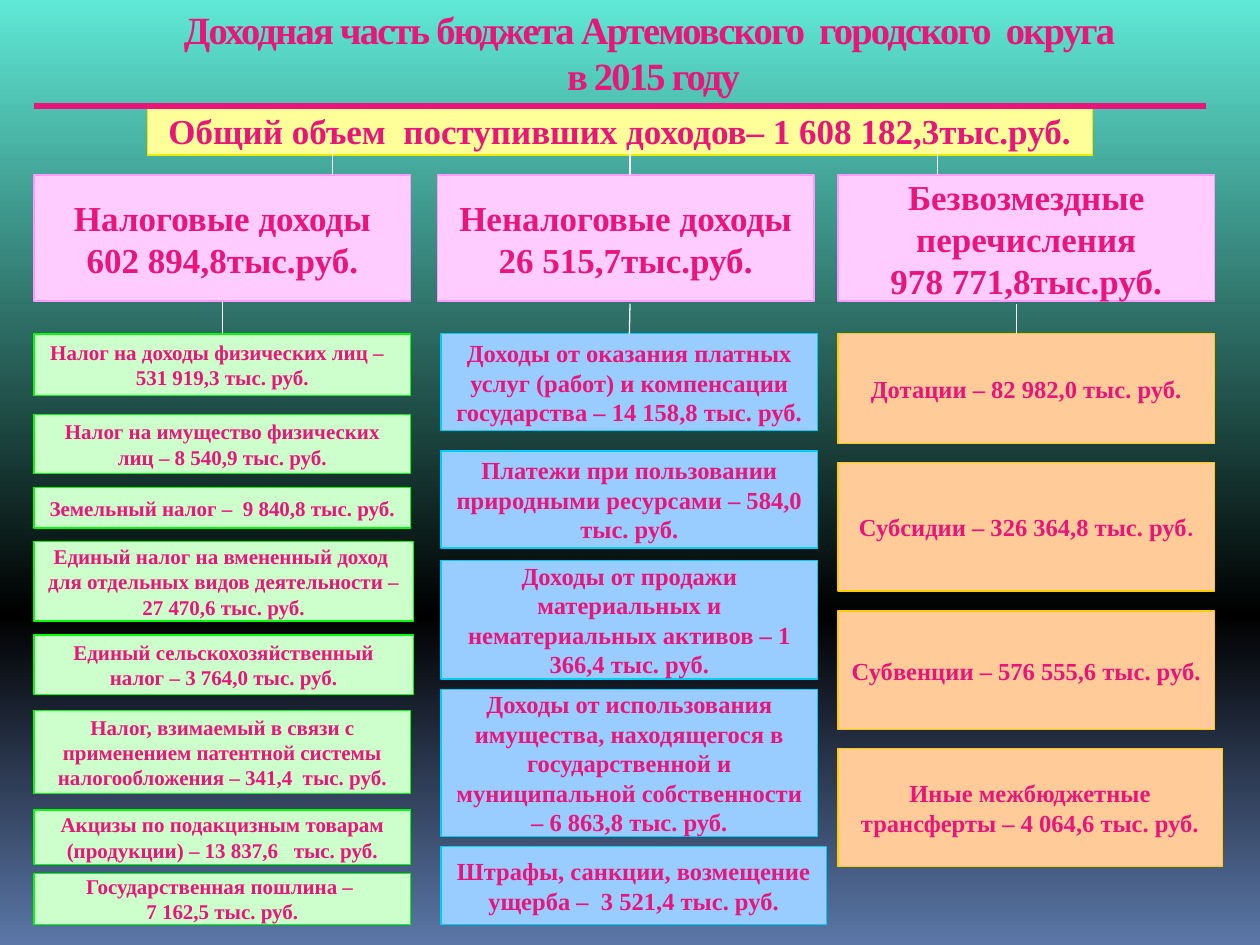
from copy import deepcopy

from pptx import Presentation
from pptx.dml.color import RGBColor
from pptx.enum.shapes import MSO_CONNECTOR as Connector, MSO_SHAPE as Shape
from pptx.enum.text import MSO_ANCHOR as Anchor, PP_ALIGN as Align
from pptx.oxml.ns import qn
from pptx.util import Inches, Pt

PINK = RGBColor(0xEA, 0x15, 0x7A)
WHITE = RGBColor(0xFF, 0xFF, 0xFF)
BACKDROP = [
    (0, RGBColor(0x5F, 0xE8, 0xD6)),
    (0.65, RGBColor(0x00, 0x00, 0x00)),
    (1, RGBColor(0x5B, 0x77, 0xA8)),
]
YELLOW = (RGBColor(0xFF, 0xFF, 0x99), RGBColor(0xF0, 0xEA, 0x00))
ROSE = (RGBColor(0xFF, 0xCC, 0xFF), RGBColor(0xFF, 0x99, 0xFF))
GREEN = (RGBColor(0xCC, 0xFF, 0xCC), RGBColor(0x00, 0xFF, 0x00))
BLUE = (RGBColor(0x99, 0xCC, 0xFF), RGBColor(0x00, 0xCC, 0xFF))
ORANGE = (RGBColor(0xFF, 0xCC, 0x99), RGBColor(0xFF, 0xCC, 0x00))

COLUMN_WIDTH = 2.99
DETAIL_TOP = 2.65

TAXES = [
    (0, 0.49, 2.99, "Налог на доходы физических лиц –  \n531 919,3 тыс. руб."),
    (0.64, 0.47, 2.99, "Налог на имущество физических лиц – 8 540,9 тыс. руб."),
    (1.22, 0.32, 2.99, "Земельный налог –  9 840,8 тыс. руб."),
    (1.65, 0.63, 3.01, "Единый налог на вмененный доход  для отдельных видов "
                       "деятельности – \n27 470,6 тыс. руб."),
    (2.39, 0.47, 3.01, "Единый сельскохозяйственный налог – 3 764,0 тыс. руб."),
    (2.99, 0.66, 2.99, "Налог, взимаемый в связи с применением патентной системы "
                       "налогообложения – 341,4  тыс. руб."),
    (3.78, 0.43, 2.99, "Акцизы по подакцизным товарам (продукции) – "
                       "13 837,6   тыс. руб."),
    (4.28, 0.41, 2.99, "Государственная пошлина – \n7 162,5 тыс. руб."),
]
NON_TAXES = [
    (0, 0.77, 2.99, "Доходы от оказания платных услуг (работ) и компенсации "
                    "государства – 14 158,8 тыс. руб."),
    (0.93, 0.77, 2.99, "Платежи при пользовании природными ресурсами – 584,0\n"
                       "тыс. руб."),
    (1.8, 0.94, 2.99, "Доходы от продажи материальных и нематериальных активов – "
                      "1 366,4 тыс. руб."),
    (2.82, 1.17, 2.99, "Доходы от использования имущества, находящегося в "
                       "государственной и муниципальной собственности – "
                       "6 863,8 тыс. руб."),
    (4.07, 0.62, 3.06, "Штрафы, санкции, возмещение ущерба –  3 521,4 тыс. руб."),
]
TRANSFERS = [
    (0, 0.87, 2.99, "Дотации – 82 982,0 тыс. руб."),
    (1.02, 1.02, 2.99, "Субсидии – 326 364,8 тыс. руб"),
    (2.2, 0.94, 2.99, "Субвенции – 576 555,6 тыс. руб."),
    (3.29, 0.94, 3.05, "Иные межбюджетные трансферты – 4 064,6 тыс. руб."),
]


def format_run(run, size, font="Times New Roman", spacing=None):
    """Give a run its bold pink look."""
    run.font.size = Pt(size)
    run.font.name = font
    run.font.bold = True
    run.font.color.rgb = PINK
    if spacing is not None:
        run.font._element.set("spc", str(int(spacing * 100)))


def write_text(frame, text, anchor=Anchor.MIDDLE, wrap=True, inset=None, **look):
    """Fill a text frame with centred paragraphs, one per line of text."""
    frame.word_wrap = wrap
    frame.vertical_anchor = anchor
    if inset is not None:
        frame.margin_left = frame.margin_right = Inches(inset)
        frame.margin_top = frame.margin_bottom = Inches(inset)
    frame.text = text
    for paragraph in frame.paragraphs:
        paragraph.alignment = Align.CENTER
        for run in paragraph.runs:
            format_run(run, **look)


def add_box(slide, left, top, width, height, colours, text, **look):
    """Add a filled rectangle with text."""
    box = slide.shapes.add_shape(
        Shape.RECTANGLE, Inches(left), Inches(top), Inches(width), Inches(height))
    box.shadow.inherit = False
    fill, outline = colours
    box.fill.solid()
    box.fill.fore_color.rgb = fill
    box.line.color.rgb = outline
    box.line.width = Pt(0.75)
    write_text(box.text_frame, text, **look)
    return box


def add_line(slide, start, end, colour=WHITE, weight=0.75):
    """Add a straight line without a shadow."""
    line = slide.shapes.add_connector(
        Connector.STRAIGHT, *(Inches(value) for value in (*start, *end)))
    line.line.color.rgb = colour
    line.line.width = Pt(weight)
    properties = line._element.spPr
    properties.append(properties.makeelement(qn("a:effectLst"), {}))
    return line


def paint_background(slide):
    """Paint the vertical three-colour gradient."""
    fill = slide.background.fill
    fill.gradient()
    fill.gradient_angle = 270
    stop_list = slide.element.find(".//" + qn("a:gsLst"))
    stop_list.append(deepcopy(stop_list[-1]))
    for stop, (position, colour) in zip(fill.gradient_stops, BACKDROP):
        stop.position = position
        stop.color.rgb = colour


def add_title(slide, left, top, width, height):
    """Add the two-line heading."""
    title = slide.shapes.add_textbox(
        Inches(left), Inches(top), Inches(width), Inches(height))
    write_text(
        title.text_frame,
        "Доходная часть бюджета Артемовского  городского  округа\v в 2015 году",
        anchor=Anchor.BOTTOM, inset=0, size=22, spacing=-1)


def add_details(slide, left, top, colours, size, items):
    """Stack the detail boxes of one column and return them."""
    return [
        add_box(slide, left, top + offset, width, height, colours, text, size=size)
        for offset, height, width, text in items
    ]


def main():
    """Build the budget income slide."""
    deck = Presentation()
    deck.slide_width, deck.slide_height = Inches(10), Inches(7.5)
    slide = deck.slides.add_slide(deck.slide_layouts[6])
    paint_background(slide)
    add_title(slide, 0.31, 0, 9.69, 0.78)

    add_box(slide, 1.17, 0.84, 7.5, 0.39, YELLOW,
            "Общий объем  поступивших доходов– 1 608 182,3тыс.руб.",
            wrap=False, size=20)
    tax_heading, _, _ = [
        add_box(slide, left, 1.39, COLUMN_WIDTH, 1, ROSE, text, size=20, inset=inset)
        for left, text, inset in (
            (0.27, "Налоговые доходы\n602 894,8тыс.руб.", None),
            (3.47, "Неналоговые доходы\n26 515,7тыс.руб.", 0),
            (6.65, "Безвозмездные перечисления\n978 771,8тыс.руб.", None))
    ]
    taxes = add_details(slide, 0.27, DETAIL_TOP, GREEN, 12, TAXES)
    non_taxes = add_details(slide, 3.5, DETAIL_TOP, BLUE, 14, NON_TAXES)
    transfers = add_details(slide, 6.65, DETAIL_TOP, ORANGE, 14, TRANSFERS)
    full_stop = transfers[1].text_frame.paragraphs[0].add_run()
    full_stop.text = "."
    format_run(full_stop, 14, font="Calibri")

    for x in (2.64, 5, 7.44):
        add_line(slide, (x, 1.15), (x, 1.39))
    tax_link, non_tax_link, _ = [
        add_line(slide, (x, 2.41), (x, DETAIL_TOP)) for x in (1.77, 5, 8.07)
    ]
    tax_link.begin_connect(tax_heading, 2)
    tax_link.end_connect(taxes[0], 0)
    non_tax_link.end_connect(non_taxes[0], 0)
    add_line(slide, (0.27, 0.84), (9.57, 0.84), colour=PINK, weight=3.75)

    deck.save("out.pptx")


if __name__ == "__main__":
    main()
